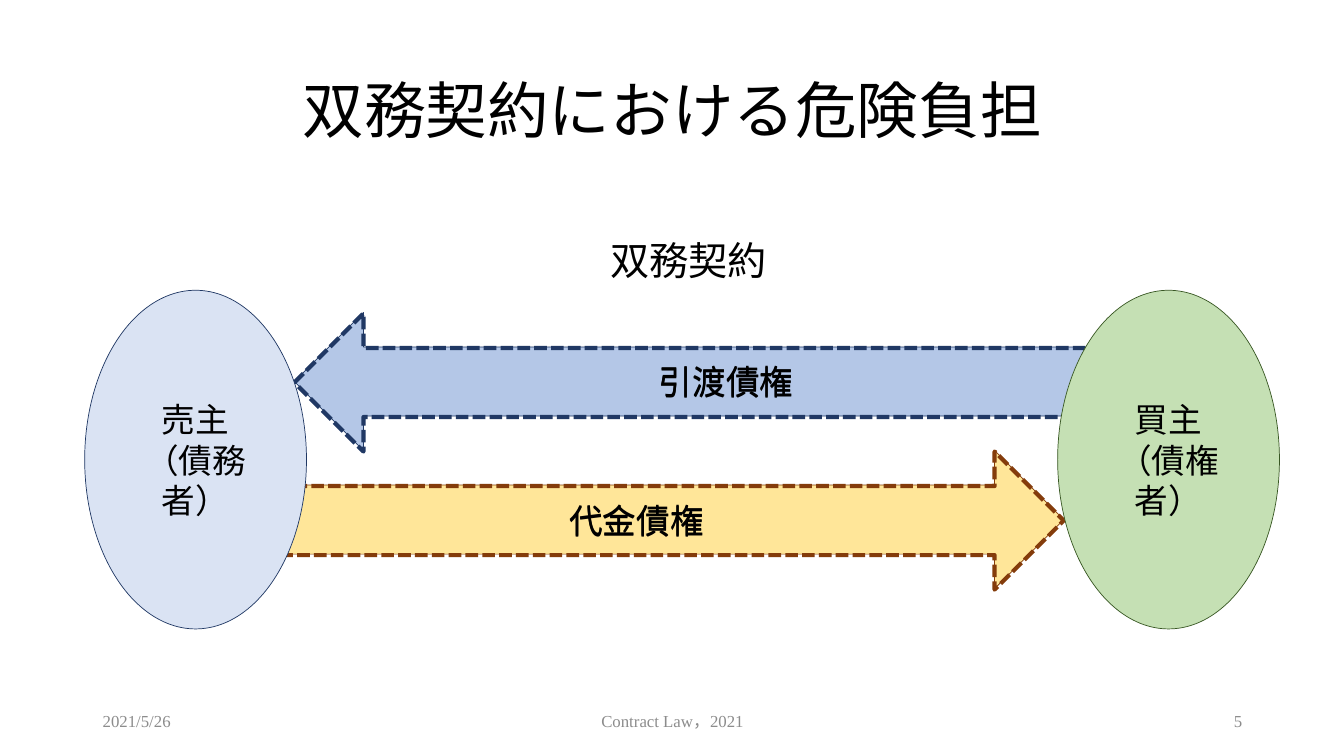
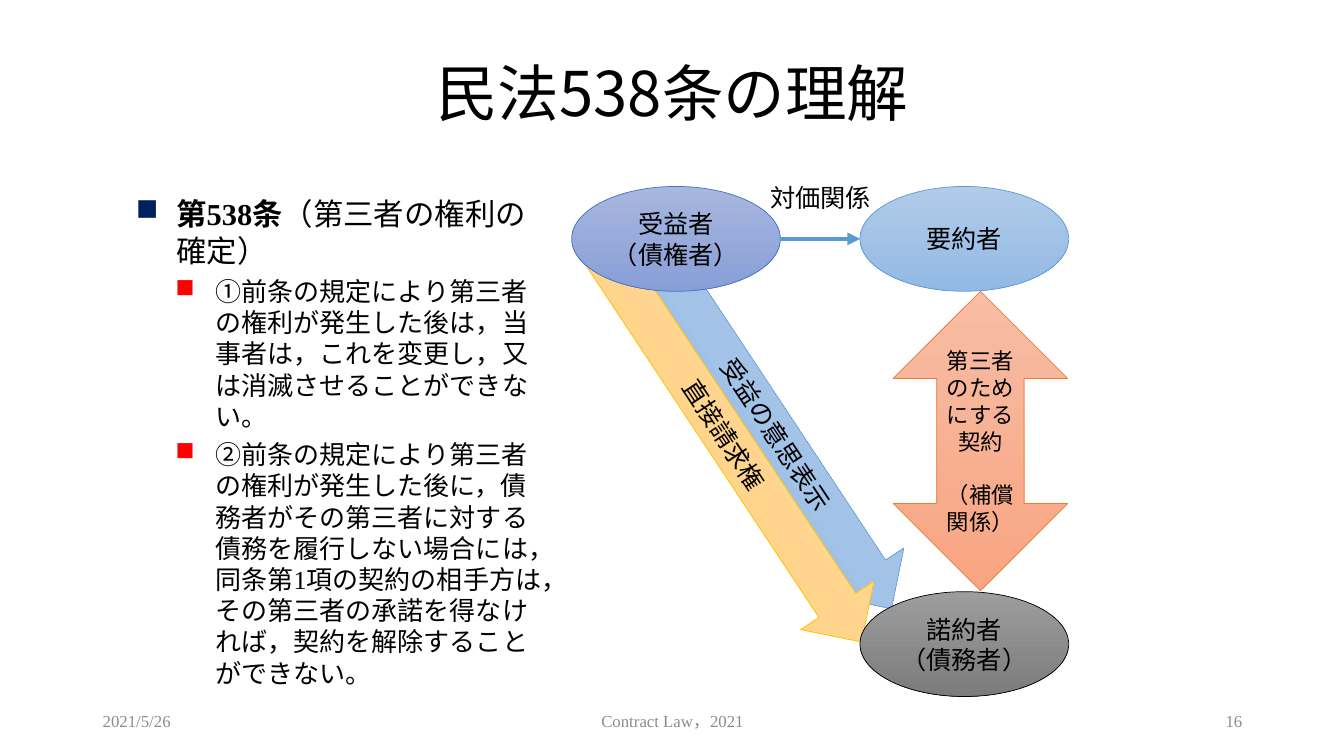
"""Build two contract-law slides: risk allocation and Article 538."""
from pptx import Presentation
from pptx import util as u
from pptx.dml.color import RGBColor
from pptx.enum import dml, shapes, text
from pptx.oxml import parse_xml
from pptx.oxml.ns import nsdecls

BODY_FONT = "Times New Roman"
TITLE_FONT = "Noto Sans CJK JP"
BLACK = RGBColor(0x00, 0x00, 0x00)
GREY = RGBColor(0x8C, 0x8C, 0x8C)
NAVY = RGBColor(0x20, 0x38, 0x64)
BROWN = RGBColor(0x84, 0x3C, 0x0B)
GREEN = RGBColor(0x38, 0x57, 0x23)
PALE_BLUE = RGBColor(0xDA, 0xE3, 0xF3)
PALE_GREEN = RGBColor(0xC5, 0xE0, 0xB4)
SOFT_BLUE = RGBColor(0xB4, 0xC7, 0xE7)
SOFT_YELLOW = RGBColor(0xFF, 0xE6, 0x99)
BLUE = RGBColor(0x5B, 0x9B, 0xD5)
INDIGO = RGBColor(0x44, 0x72, 0xC4)
ORANGE = RGBColor(0xED, 0x7D, 0x31)
GOLD = RGBColor(0xFF, 0xC0, 0x00)
BLUE_FADE = (RGBColor(0xB1, 0xCB, 0xE9), RGBColor(0x93, 0xB9, 0xE4))
INDIGO_FADE = (RGBColor(0xA8, 0xB7, 0xDF), RGBColor(0x88, 0x9E, 0xD7))
ORANGE_FADE = (RGBColor(0xF7, 0xBD, 0xA5), RGBColor(0xF8, 0xA5, 0x82))
GOLD_FADE = (RGBColor(0xFF, 0xDB, 0x9E), RGBColor(0xFF, 0xD0, 0x7C))
GREY_FADE = (RGBColor(0x9D, 0x9D, 0x9D), RGBColor(0x7C, 0x7C, 0x7C))
LEFT, CENTER, RIGHT = text.PP_ALIGN.LEFT, text.PP_ALIGN.CENTER, text.PP_ALIGN.RIGHT
SHAPE = shapes.MSO_SHAPE
DASH = dml.MSO_LINE.SQUARE_DOT


def write(sp, lines, size, align=CENTER, color=BLACK, font=BODY_FONT, anchor=text.MSO_ANCHOR.MIDDLE):
    """Write one paragraph per line, with line breaks at newlines."""
    tf = sp.text_frame
    tf.word_wrap = True
    tf.vertical_anchor = anchor
    for i, line in enumerate(lines):
        p = tf.add_paragraph() if i else tf.paragraphs[0]
        p.alignment = align
        for j, part in enumerate(line.split("\n")):
            if j:
                p.add_line_break()
            r = p.add_run()
            r.text = part
            r.font.size, r.font.name, r.font.color.rgb = u.Pt(size), font, color
    return tf


def add_figure(s, kind, box, fill, line, lines, size, width=0.5, dash=None, rotation=0):
    """Draw a preset shape with a plain, faded or absent fill."""
    sp = s.shapes.add_shape(kind, *map(u.Inches, box))
    sp.shadow.inherit = False
    sp.rotation = rotation
    if fill is None:
        sp.fill.background()
    elif isinstance(fill, RGBColor):
        sp.fill.solid()
        sp.fill.fore_color.rgb = fill
    else:
        sp.fill.gradient()
        sp.fill.gradient_angle = 270
        for stop, color in zip(sp.fill.gradient_stops, fill):
            stop.color.rgb = color
    sp.line.color.rgb = line
    sp.line.width = u.Pt(width)
    if dash:
        sp.line.dash_style = dash
    write(sp, lines, size)
    return sp


prs = Presentation()
prs.slide_width, prs.slide_height = u.Inches(13.33), u.Inches(7.5)

slides = []
for title, height, number in [("双務契約における危険負担", 1.45, "5"), ("民法538条の理解", 1.12, "16")]:
    s = prs.slides.add_slide(prs.slide_layouts[5])
    sp = s.shapes.title
    sp.left, sp.top, sp.width, sp.height = map(u.Inches, (0.92, 0.4, 11.5, height))
    write(sp, [title], 44, font=TITLE_FONT).paragraphs[0].line_spacing = 0.9
    for left, width, align, label in [
        (0.92, 3, LEFT, "2021/5/26"),
        (4.42, 4.5, CENTER, "Contract Law，2021"),
        (9.42, 3, RIGHT, number),
    ]:
        sp = s.shapes.add_textbox(u.Inches(left), u.Inches(6.95), u.Inches(width), u.Inches(0.4))
        write(sp, [label], 12, align, GREY)
    slides.append(s)
risk, article = slides

for kind, left, top, width, fill, line, label in [
    (SHAPE.RIGHT_ARROW, 2.42, 4.47, 8.13, SOFT_YELLOW, BROWN, "代金債権"),
    (SHAPE.LEFT_ARROW, 2.92, 3.1, 8.22, SOFT_BLUE, NAVY, "引渡債権"),
]:
    add_figure(risk, kind, (left, top, width, 1.37), fill, line, [label], 24)
    add_figure(risk, kind, (left, top + 0.01, width, 1.37), None, line, [label], 24, 3, DASH)
for left, fill, line, label in [
    (0.84, PALE_BLUE, NAVY, "売主\n（債務者）"),
    (10.49, PALE_GREEN, GREEN, "買主\n（債権者）"),
]:
    add_figure(risk, SHAPE.OVAL, (left, 2.88, 2.2, 3.36), fill, line, [label], 24)

for s, box, label, size in [
    (risk, (5.86, 2.3, 1.94, 0.57), "双務契約", 28),
    (article, (7.51, 1.76, 1.26, 0.4), "対価関係", 18),
]:
    write(s.shapes.add_textbox(*map(u.Inches, box)), [label], size, anchor=text.MSO_ANCHOR.TOP)

sp = article.shapes.add_textbox(u.Inches(1.25), u.Inches(1.89), u.Inches(4.33), u.Inches(4.95))
tf = sp.text_frame
tf.word_wrap = True
for i, (level, size, runs) in enumerate([
    (0, 21.7, ["第538条", "（第三者の権利の確定）"]),
    (1, 18.6, ["①前条の規定により第三者の権利が発生した後は，当事者は，これを変更し，又は消滅させることができない。"]),
    (1, 18.6, ["②前条の規定により第三者の権利が発生した後に，債務者がその第三者に対する債務を履行しない場合には，"
               "同条第1項の契約の相手方は，その第三者の承諾を得なければ，契約を解除することができない。"]),
]):
    p = tf.add_paragraph() if i else tf.paragraphs[0]
    p.level = level
    p.space_before = u.Pt((10, 5)[level])
    pPr = p._p.get_or_add_pPr()
    pPr.set("marL", str(u.Inches((0.4, 0.79)[level])))
    pPr.set("indent", str(u.Inches(-0.4)))
    bullet = ("002060", "FF0000")[level]
    pPr.append(parse_xml(f'<a:buClr {nsdecls("a")}><a:srgbClr val="{bullet}"/></a:buClr>'))
    pPr.append(parse_xml(f'<a:buChar {nsdecls("a")} char="■"/>'))
    for j, part in enumerate(runs):
        r = p.add_run()
        r.text = part
        r.font.size, r.font.name, r.font.color.rgb = u.Pt(size), BODY_FONT, BLACK
        r.font.bold = level == 0 and j == 0

sp = add_figure(article, SHAPE.UP_DOWN_ARROW, (8.86, 2.89, 1.73, 2.97), ORANGE_FADE, ORANGE,
                ["第三者のためにする契約", "（補償", "関係）"], 16)
sp.text_frame.margin_left = sp.text_frame.margin_right = u.Inches(0.05)
sp.text_frame.paragraphs[1].space_before = u.Pt(19)

for left, width, fill, line, label, dash in [
    (5.8, 3.92, BLUE_FADE, BLUE, "受益の意思表示", DASH),
    (4.89, 4.71, GOLD_FADE, GOLD, "直接請求権", None),
]:
    add_figure(article, SHAPE.RIGHT_ARROW, (left, 3.97, width, 0.87), fill, line, [label], 18,
               dash=dash, rotation=56.5)
for left, top, fill, line, lines in [
    (8.53, 1.85, BLUE_FADE, BLUE, ["要約者"]),
    (8.53, 5.87, GREY_FADE, BLACK, ["諾約者", "（債務者）"]),
    (5.67, 1.85, INDIGO_FADE, INDIGO, ["受益者", "（債権者）"]),
]:
    add_figure(article, SHAPE.OVAL, (left, top, 2.07, 1.04), fill, line, lines, 18)

c = article.shapes.add_connector(shapes.MSO_CONNECTOR.STRAIGHT, *map(u.Inches, (7.74, 2.37, 8.53, 2.37)))
c.line.color.rgb = BLUE
c.line.width = u.Pt(3)
c.line._get_or_add_ln().append(parse_xml(f'<a:tailEnd {nsdecls("a")} type="triangle"/>'))
c._element.spPr.append(parse_xml(f'<a:effectLst {nsdecls("a")}/>'))

prs.save("out.pptx")
